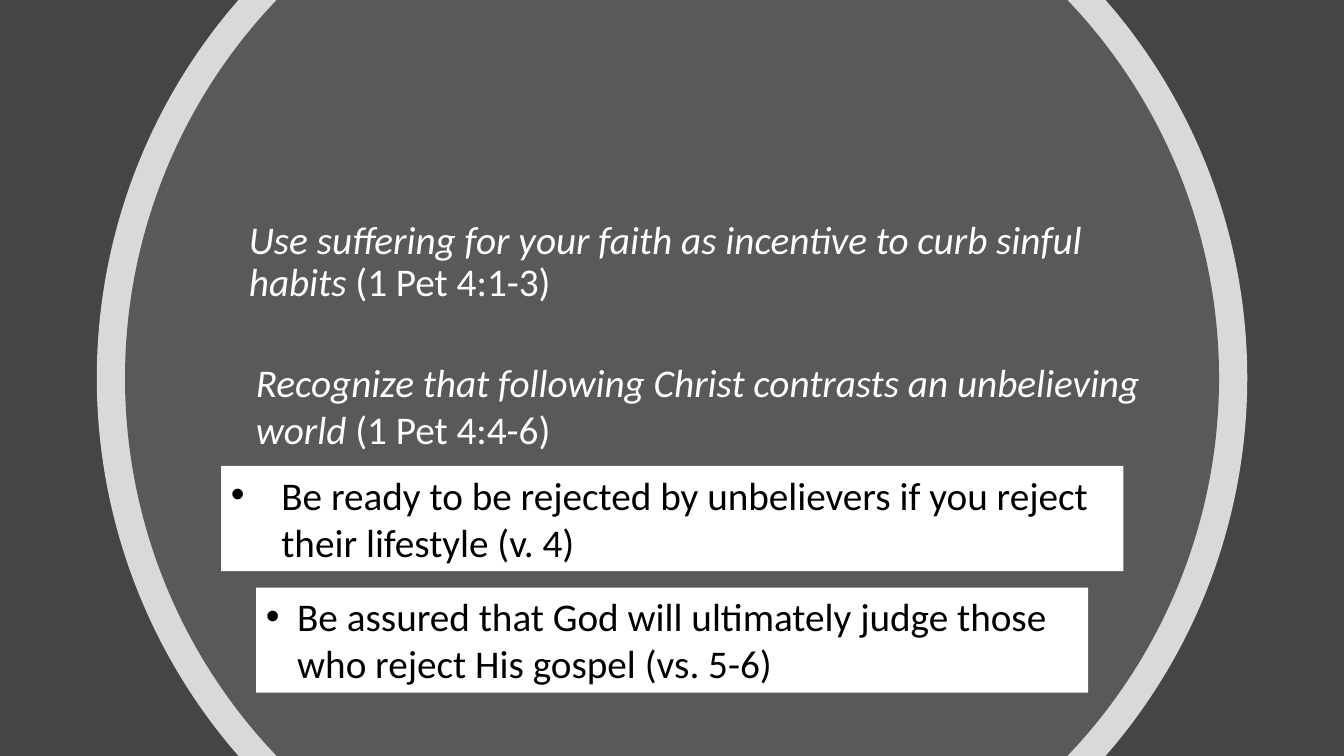
from math import asin, cos, sin, tan

from lxml.etree import SubElement
from pptx import Presentation
from pptx.dml.color import RGBColor
from pptx.enum.shapes import MSO_SHAPE
from pptx.enum.text import MSO_ANCHOR, MSO_AUTO_SIZE, PP_ALIGN
from pptx.oxml.ns import qn
from pptx.util import Inches, Pt

WIDE, HIGH = Inches(13.33), Inches(7.5)
COL, ROW = WIDE / 100, HIGH / 100
RISE = 0.97
BENDS = (2, 5, 11, 14)
FRAME = {"word_wrap": True, "vertical_anchor": MSO_ANCHOR.TOP}
FONT = {"name": "Calibri", "size": Pt(28)}


def paint(fill, tone):
    fill.solid()
    fill.fore_color.rgb = RGBColor.from_string(tone)


def style(item, look):
    for key, value in look.items():
        setattr(item, key, value)


def place(box):
    x, y, w, h = box
    return [round(n) for n in (x * COL, y * ROW, w * COL, h * ROW)]


def outline(box):
    x, y, w, h = place(box)
    rad, half = w / 2, h / 2
    turn = asin(RISE * half / rad)
    pull = 4 / 3 * tan(turn / 4) * rad
    flat = rad * cos(asin(half / rad))
    end_x, end_y = rad * cos(turn), rad * sin(turn)
    ctrl_x, ctrl_y = end_x + pull * sin(turn), end_y - pull * cos(turn)
    top = [(flat, -half), (end_x, -end_y), (ctrl_x, -ctrl_y), (rad, -pull)]
    right = top + [(rad, 0)] + [(a, -b) for a, b in reversed(top)]
    ring = right + [(-a, -b) for a, b in right]
    return [(round(x + rad + a), round(y + half + b)) for a, b in ring]


def bend(shape):
    lines = list(shape._element.iter(qn("a:lnTo")))
    for first in BENDS:
        start, *rest = lines[first:first + 3]
        start.tag = qn("a:cubicBezTo")
        for line in rest:
            start.append(line[0])
            line.getparent().remove(line)


def add_disc(slide, box, tone, alpha=None):
    dots = outline(box)
    pen = slide.shapes.build_freeform(*dots[-1])
    pen.add_line_segments(dots[:-1], close=True)
    disc = pen.convert_to_shape()
    bend(disc)
    disc.shadow.inherit = False
    disc.line.fill.background()
    paint(disc.fill, tone)
    if alpha:
        color = disc.fill._xPr.find(qn("a:solidFill"))[0]
        SubElement(color, qn("a:alpha")).set("val", str(alpha * 1000))


def write(shape, parts, tone, layout, grow=True):
    frame = shape.text_frame
    style(frame, FRAME)
    frame.auto_size = MSO_AUTO_SIZE.SHAPE_TO_FIT_TEXT if grow else MSO_AUTO_SIZE.NONE
    para = frame.paragraphs[0]
    style(para, {"alignment": PP_ALIGN.LEFT, **layout})
    for words, slant in parts:
        run = para.add_run()
        run.text = words
        style(run.font, {**FONT, "italic": slant})
        run.font.color.rgb = RGBColor.from_string(tone)
    return para


def add_point(slide, box, claim, verse, layout, grow):
    shape = slide.shapes.add_textbox(*place(box))
    write(shape, [(claim, True), (verse, False)], "FFFFFF", layout, grow)


def add_note(slide, box, words, indent):
    shape = slide.shapes.add_shape(MSO_SHAPE.RECTANGLE, *place(box))
    shape.shadow.inherit = False
    shape.line.fill.background()
    paint(shape.fill, "FFFFFF")
    props = write(shape, [(words, False)], "000000", {})._p.get_or_add_pPr()
    props.set("marL", str(Inches(indent)))
    props.set("indent", str(-Inches(indent)))
    SubElement(props, qn("a:buFont")).set("typeface", "Arial")
    SubElement(props, qn("a:buChar")).set("char", "•")


def main():
    deck = Presentation()
    style(deck, {"slide_width": WIDE, "slide_height": HIGH})
    slide = deck.slides.add_slide(deck.slide_layouts[6])
    paint(slide.background.fill, "454545")
    add_disc(slide, (7.2, 0, 85.6, 100), "FFFFFF", 80)
    add_disc(slide, (9.3, 0, 81.4, 100), "595959")
    add_point(slide, (17.78, 28.53, 64.52, 58.67),
              "Use suffering for your faith as incentive to curb sinful habits",
              " (1 Pet 4:1-3)", {"line_spacing": 0.9, "space_after": Pt(6)}, False)
    add_point(slide, (18.3, 46.72, 68.57, 13.91),
              "Recognize that following Christ contrasts an unbelieving world",
              " (1 Pet 4:4-6)", {}, True)
    add_note(slide, (16.45, 61.64, 67.14, 13.91),
             "Be ready to be rejected by unbelievers if you reject their lifestyle (v. 4)", 0.5)
    add_note(slide, (19.05, 77.73, 61.92, 13.91),
             "Be assured that God will ultimately judge those who reject His gospel (vs. 5-6)", 0.31)
    deck.save("out.pptx")


if __name__ == "__main__":
    main()
